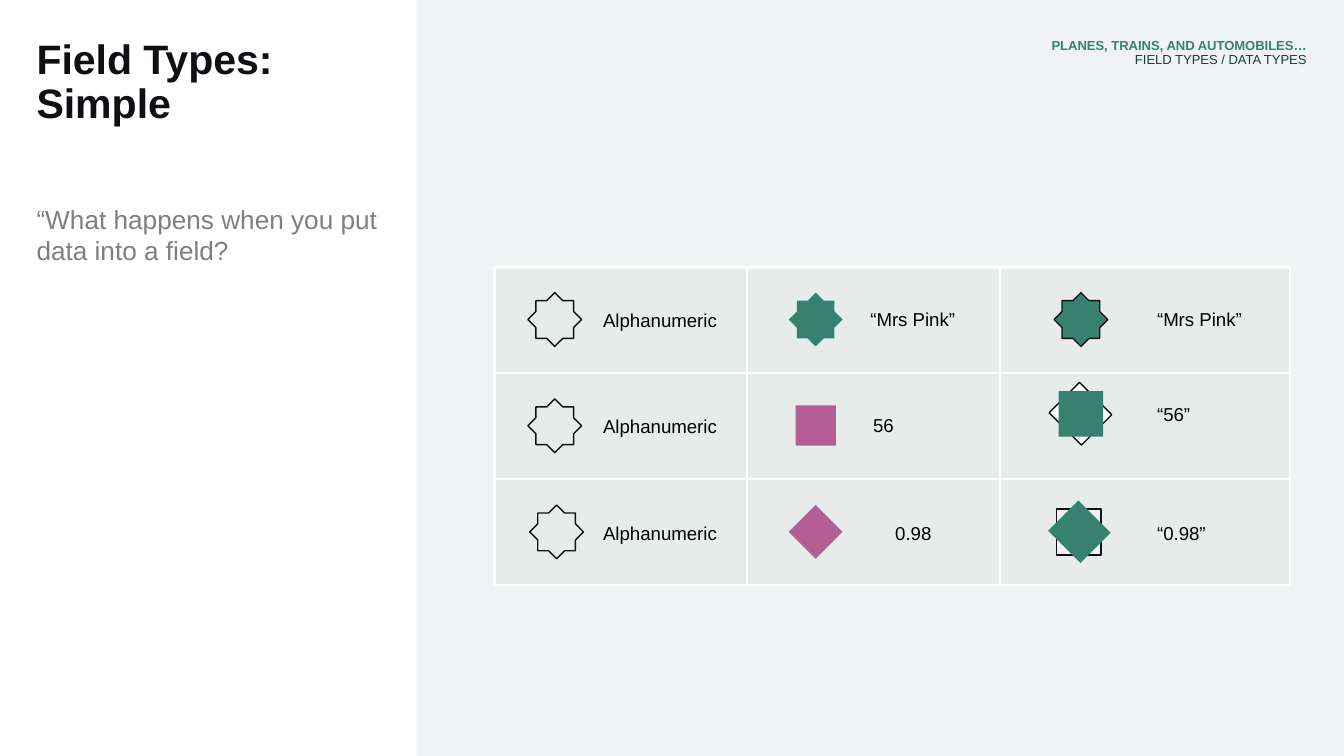
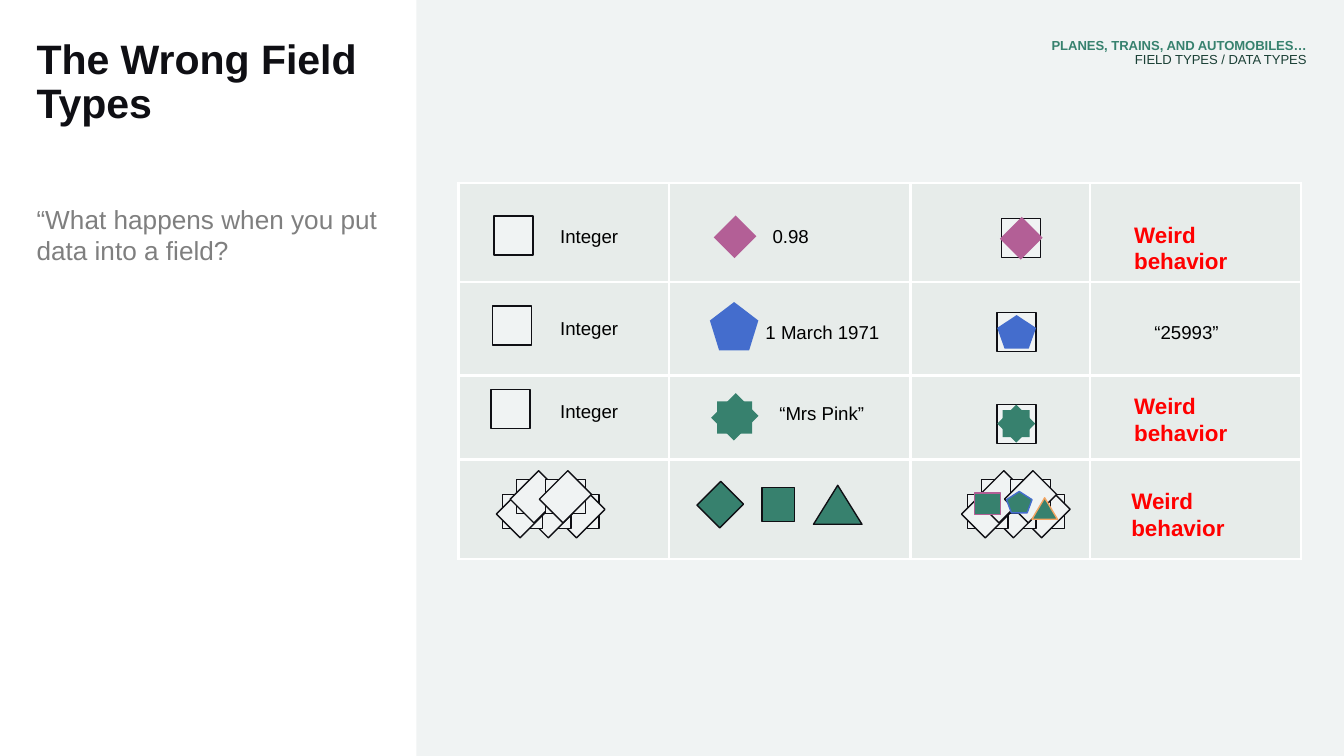
from dataclasses import dataclass, replace
from typing import Any, Optional

from lxml import etree
from pptx import Presentation
from pptx import util as u
from pptx.dml.color import RGBColor
from pptx.enum import shapes, text
from pptx.oxml import ns

FONT = "Arial"
INK, BLACK, WHITE, GREY, RED = "0F0F14", "000000", "FFFFFF", "7F7F7F", "FF0000"
PANEL, CELL = "F0F3F3", "E7ECEA"
GREEN, DARK_GREEN, PINK, BLUE, ORANGE = "37816E", "1B4036", "B35F96", "446DCD", "F4A562"
QUESTION = "“What happens when you put data into a field?"

RECT = shapes.MSO_SHAPE.RECTANGLE
DIAMOND = shapes.MSO_SHAPE.DIAMOND
PENTAGON = shapes.MSO_SHAPE.REGULAR_PENTAGON
TRIANGLE = shapes.MSO_SHAPE.ISOSCELES_TRIANGLE


@dataclass(frozen=True)
class Label:
    text: str
    left: float
    top: float
    width: float
    height: float = 24
    size: float = 10
    color: str = BLACK
    bold: bool = False


@dataclass(frozen=True)
class Symbol:
    kind: Any
    left: float
    top: float
    width: float
    height: float
    fill: Optional[str] = PANEL
    line: Optional[str] = None
    rotation: float = 0


@dataclass(frozen=True)
class Star:
    left: float
    top: float
    fill: Optional[str] = None
    line: Optional[str] = INK


@dataclass(frozen=True)
class Grid:
    left: float
    top: float
    columns: tuple[float, ...]
    rows: tuple[float, ...]


@dataclass(frozen=True)
class FieldSlide:
    title: str
    grid: Grid
    labels: list[Label]
    symbols: list[Any]


def rgb(color: str) -> RGBColor:
    return RGBColor.from_string(color)


def apply(target: Any, **values: Any) -> None:
    for name, value in values.items():
        setattr(target, name, value)


def set_font(font: Any, size: float, color: str, bold: bool = False) -> None:
    apply(font, name=FONT, size=u.Pt(size), bold=bold)
    font.color.rgb = rgb(color)


def set_frame(frame: Any, left: float, top: float, right: float, bottom: float) -> None:
    apply(frame, word_wrap=True, auto_size=text.MSO_AUTO_SIZE.NONE,
          vertical_anchor=text.MSO_ANCHOR.TOP,
          margin_left=u.Pt(left), margin_top=u.Pt(top),
          margin_right=u.Pt(right), margin_bottom=u.Pt(bottom))


def paint(shape: Any, fill: Optional[str], line: Optional[str]) -> None:
    shape.shadow.inherit = False
    if fill:
        shape.fill.solid()
        shape.fill.fore_color.rgb = rgb(fill)
    else:
        shape.fill.background()
    if line:
        shape.line.color.rgb = rgb(line)
        shape.line.width = u.Pt(0.75)
    else:
        shape.line.fill.background()


def draw_symbol(slide: Any, symbol: Symbol) -> Any:
    box = (symbol.left, symbol.top, symbol.width, symbol.height)
    shape = slide.shapes.add_shape(symbol.kind, *map(u.Pt, box))
    shape.rotation = symbol.rotation
    paint(shape, symbol.fill, symbol.line)
    return shape


def draw_star(slide: Any, star: Star) -> None:
    """Draw the outline of two crossed squares, one quarter turn at a time."""
    radius, side, notch = 14.4, 10.1, 4.3
    quarter = [(0, -radius), (notch, -side), (side, -side), (side, -notch)]
    points = []
    for _ in range(4):
        points += quarter
        quarter = [(-y, x) for x, y in quarter]
    outline = [(u.Pt(star.left + radius + x), u.Pt(star.top + radius + y)) for x, y in points]
    builder = slide.shapes.build_freeform(*outline[0])
    builder.add_line_segments(outline[1:], close=True)
    paint(builder.convert_to_shape(), star.fill, star.line)


def draw_label(slide: Any, label: Label) -> None:
    box = (label.left, label.top, label.width, label.height)
    frame = slide.shapes.add_textbox(*map(u.Pt, box)).text_frame
    set_frame(frame, 7.2, 7.2, 7.2, 7.2)
    paragraph = frame.paragraphs[0]
    paragraph.text = label.text
    set_font(paragraph.font, label.size, label.color, label.bold)


def format_cell(cell: Any) -> None:
    cell.fill.solid()
    cell.fill.fore_color.rgb = rgb(CELL)
    properties = cell._tc.get_or_add_tcPr()
    for index, side in enumerate(("lnL", "lnR", "lnT", "lnB")):
        border = etree.Element(ns.qn(f"a:{side}"), w=str(u.Pt(1.5)))
        fill = etree.SubElement(border, ns.qn("a:solidFill"))
        etree.SubElement(fill, ns.qn("a:srgbClr"), val=WHITE)
        properties.insert(index, border)


def draw_grid(slide: Any, grid: Grid) -> None:
    box = (grid.left, grid.top, sum(grid.columns), sum(grid.rows))
    table = slide.shapes.add_table(
        len(grid.rows), len(grid.columns), *map(u.Pt, box)).table
    apply(table, first_row=False, horz_banding=False)
    for column, width in zip(table.columns, grid.columns):
        column.width = u.Pt(width)
    for row, height in zip(table.rows, grid.rows):
        row.height = u.Pt(height)
    for cell in table.iter_cells():
        format_cell(cell)


def fill_placeholder(shape: Any, content: str, top: float, width: float, height: float,
                     size: float, color: str, bold: bool, spacing: float) -> None:
    apply(shape, left=u.Pt(19.6), top=u.Pt(top), width=u.Pt(width), height=u.Pt(height))
    set_frame(shape.text_frame, 0, 0, 7.2, 7.2)
    paragraph = shape.text_frame.paragraphs[0]
    paragraph.text = content
    properties = paragraph._p.get_or_add_pPr()
    apply_xml = {"marL": "0", "indent": "0"}
    for name, value in apply_xml.items():
        properties.set(name, value)
    etree.SubElement(properties, ns.qn("a:buNone"))
    apply(paragraph, alignment=text.PP_ALIGN.LEFT, line_spacing=spacing, space_before=u.Pt(0))
    set_font(paragraph.font, size, color, bold)


def draw_header(slide: Any) -> None:
    frame = slide.shapes.add_textbox(*map(u.Pt, (479, 20.8, 221, 26))).text_frame
    set_frame(frame, 0, 0, 0, 7.2)
    paragraph = frame.paragraphs[0]
    apply(paragraph, alignment=text.PP_ALIGN.RIGHT, line_spacing=0.9)
    section = paragraph.add_run()
    section.text = "PLANES, TRAINS, AND AUTOMOBILES…"
    set_font(section.font, 7, GREEN, True)
    paragraph.add_line_break()
    topic = paragraph.add_run()
    topic.text = "FIELD TYPES / DATA TYPES"
    set_font(topic.font, 7, DARK_GREEN)


def draw_slide(presentation: Any, layout: Any, content: FieldSlide) -> Any:
    slide = presentation.slides.add_slide(layout)
    fill_placeholder(slide.shapes.title, content.title, 20.8, 203, 92, 22, INK, True, 0.9)
    fill_placeholder(slide.placeholders[1], QUESTION, 108.8, 193, 34, 14, GREY, False, 1.0)
    draw_header(slide)
    draw_grid(slide, content.grid)
    for label in content.labels:
        draw_label(slide, label)
    for symbol in content.symbols:
        draw = draw_star if isinstance(symbol, Star) else draw_symbol
        draw(slide, symbol)
    return slide


def box_pile(left: float) -> list[Symbol]:
    """Five upright boxes, each with a tilted one on top."""
    pile = []
    for x, y in ((30.2, 265), (15.1, 265), (0, 265), (7.4, 257), (23, 257)):
        upright = Symbol(RECT, left + x, y, 21.6, 18, PANEL, INK)
        tilted = replace(upright, left=upright.left + 1.7, top=y - 1.6,
                         width=18, height=21.6, rotation=45)
        pile += [upright, tilted]
    return pile


def integer_box(left: float, top: float) -> Symbol:
    return Symbol(RECT, left, top, 20.9, 20.9, PANEL, INK)


def weird(left: float, top: float) -> Label:
    return Label("Weird behavior", left, top, 98, size=12, color=RED, bold=True)


SIMPLE = FieldSlide(
    "Field Types: Simple",
    Grid(265, 143.2, (135.3, 135.3, 155.5), (56.7,) * 3),
    [Label("Alphanumeric", 316, 158.4 + 56.9 * row, 85) for row in range(3)] + [
        Label("“Mrs Pink”", 459.2, 157.8, 69),
        Label("56", 460.6, 214.6, 42.5),
        Label("0.98", 472.5, 272.2, 42.5),
        Label("“Mrs Pink”", 612.8, 157.8, 69),
        Label("“56”", 612.8, 208.7, 42.5),
        Label("“0.98”", 612.8, 272.2, 42.5),
    ],
    [
        Symbol(RECT, 426.2, 217.2, 21.6, 21.6, PINK),
        Symbol(RECT, 566, 272.8, 23.8, 24.5, PANEL, INK),
        Symbol(RECT, 566, 273.4, 24.5, 23, GREEN, rotation=45),
        Symbol(RECT, 566.6, 210.2, 24.5, 23, WHITE, INK, 45),
        Symbol(RECT, 567.2, 209.5, 23.8, 24.5, GREEN),
        Star(282.8, 156.8),
        Star(282.8, 213.7),
        Star(283.8, 270.6),
        Star(422.6, 156.8, GREEN, None),
        Symbol(DIAMOND, 422.6, 270.6, 28.8, 28.8, PINK),
        Star(564.7, 156.8, GREEN),
    ],
)

WRONG = FieldSlide(
    "The Wrong Field Types",
    Grid(245.7, 98.1, (112.8, 129.3, 96.3, 112.8), (53.1, 50, 45.1, 53.1)),
    [Label("Integer", 293, top, 51) for top in (113, 162.5, 207)] + [
        Label("0.98", 406.8, 113, 47),
        Label("1 March 1971", 403, 164.8, 98),
        Label("“Mrs Pink”", 410.4, 207.8, 63.4),
        Label("“25993”", 611.4, 164.8, 61),
        weird(600.5, 111),
        weird(600.5, 203),
        weird(599, 253.6),
    ],
    box_pile(269.2) + box_pile(518.4) + [
        Symbol(RECT, 522.2, 264.2, 13.7, 11.5, GREEN, PINK),
        Symbol(PENTAGON, 539.2, 263.3, 13.7, 11.5, GREEN, BLUE),
        Symbol(TRIANGLE, 552.8, 266.7, 13.7, 11.5, GREEN, ORANGE),
        integer_box(264.7, 115.7),
        integer_box(263.8, 164),
        integer_box(263, 208.8),
        Symbol(RECT, 377.2, 261.4, 17.3, 18, GREEN, INK, 45),
        Symbol(RECT, 408.3, 261.3, 17.3, 18, GREEN, INK),
        Symbol(TRIANGLE, 435.8, 260, 26, 20.9, GREEN, INK),
        Symbol(RECT, 384.2, 215, 18.7, 17.3, GREEN),
        Symbol(RECT, 385, 214, 17.3, 18.7, GREEN, rotation=45),
        Symbol(PENTAGON, 380.3, 161.8, 26, 26, BLUE),
        Symbol(RECT, 385.9, 118.6, 15.8, 16.6, PINK, rotation=45),
        integer_box(536.6, 117),
        Symbol(RECT, 539.2, 119.4, 15.8, 16.6, PINK, rotation=45),
        integer_box(534.2, 216.8),
        integer_box(534.2, 167.3),
        Symbol(PENTAGON, 534.2, 168.8, 20.9, 18, BLUE),
        Symbol(RECT, 537.2, 219.8, 14.4, 14.4, GREEN),
        Symbol(RECT, 537.2, 219.8, 14.4, 14.4, GREEN, rotation=45),
    ],
)


def main() -> None:
    presentation = Presentation()
    apply(presentation, slide_width=u.Pt(720), slide_height=u.Pt(405))
    layout = presentation.slide_layouts[1]
    slides = [draw_slide(presentation, layout, content) for content in (SIMPLE, WRONG)]
    panel = draw_symbol(slides[0], Symbol(RECT, 223, 0, 497, 405, PANEL))
    layout.element.cSld.spTree.append(panel.element)  # shared by both slides
    presentation.save("out.pptx")


if __name__ == "__main__":
    main()
